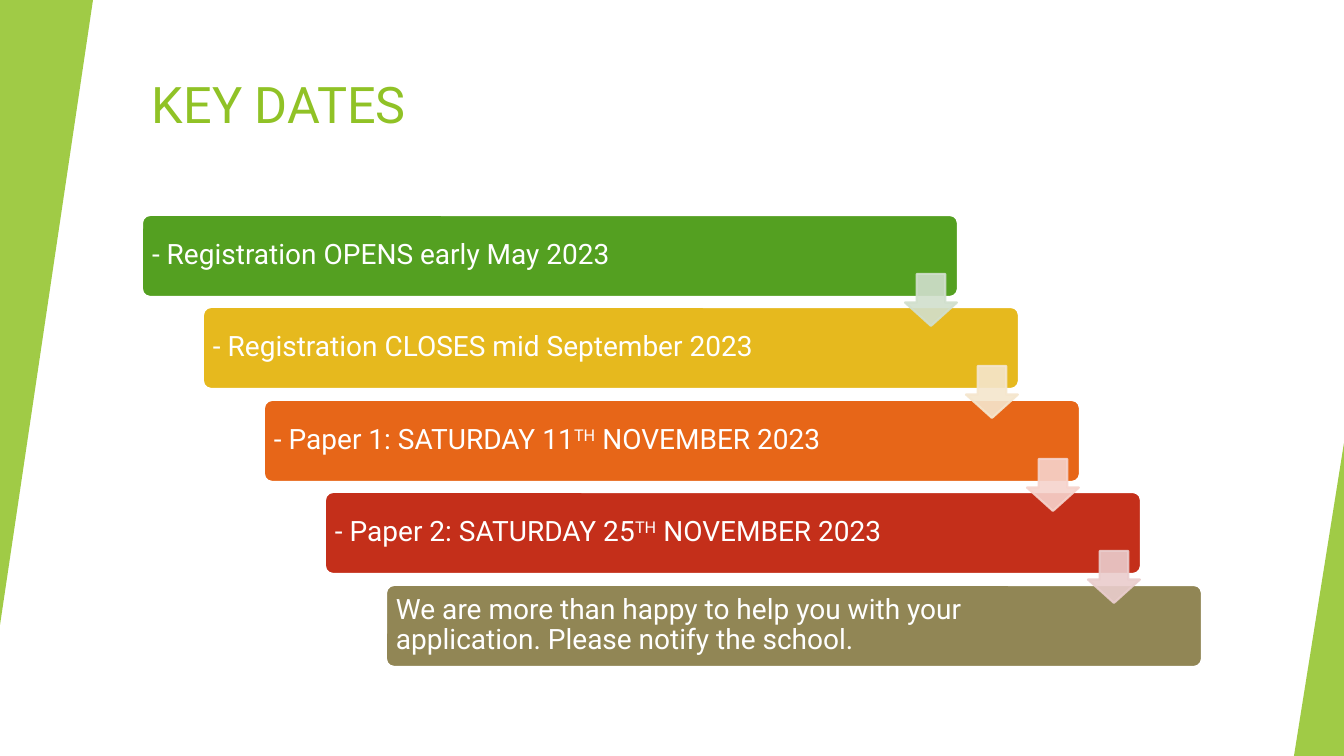
"""Build the key dates slide: a staircase of dated steps joined by arrows."""
import lxml.etree
import pptx
import pptx.dml.color
import pptx.enum.shapes
import pptx.enum.text
import pptx.oxml.ns
import pptx.util

RGB = pptx.dml.color.RGBColor
SHAPE = pptx.enum.shapes.MSO_SHAPE
ANCHOR = pptx.enum.text.MSO_ANCHOR

SLIDE_W, SLIDE_H = 1344, 756
SCALE = 12192000 / SLIDE_W
FONT = "Roboto"

WHITE = RGB(0xFF, 0xFF, 0xFF)
LIME = RGB(0x90, 0xC2, 0x26)
GREEN = RGB(0x54, 0xA0, 0x21)
YELLOW = RGB(0xE6, 0xB9, 0x1E)
ORANGE = RGB(0xE7, 0x66, 0x18)
RED = RGB(0xC4, 0x2F, 0x1A)
OLIVE = RGB(0x91, 0x86, 0x55)
PALE_GREEN = RGB(0xD1, 0xDF, 0xCD)
PALE_YELLOW = RGB(0xF5, 0xE6, 0xCD)
PALE_ORANGE = RGB(0xF6, 0xD3, 0xCC)
PALE_RED = RGB(0xEA, 0xCD, 0xCD)

STEPS = [
    (["- Registration OPENS early May 2023"], GREEN, 720),
    (["- Registration CLOSES mid September 2023"], YELLOW, 698),
    (["- Paper 1: SATURDAY 11", "TH", " NOVEMBER 2023"], ORANGE, 698),
    (["- Paper 2: SATURDAY 25", "TH", " NOVEMBER 2023"], RED, 698),
    (["We are more than happy to help you with your application. "
      "Please notify the school."], OLIVE, 698),
]
ARROWS = [PALE_GREEN, PALE_YELLOW, PALE_ORANGE, PALE_RED]


def px(n):
    """Turn a length in px into EMU."""
    return pptx.util.Emu(round(n * SCALE))


def stair(left, top, i):
    """Return the corner of item i on the staircase."""
    return left + 61 * i, top + 185 * i // 2


def add_shape(s, kind, box, color, adjust, line=None, opacity=100):
    """Add a filled preset shape, outlined if a line colour is given."""
    sp = s.shapes.add_shape(kind, *map(px, box))
    sp.shadow.inherit = False
    for i, value in enumerate(adjust):
        sp.adjustments[i] = value
    sp.fill.solid()
    sp.fill.fore_color.rgb = color
    if line is None:
        sp.line.fill.background()
    else:
        sp.line.color.rgb = line
        sp.line.width = pptx.util.Pt(1.5)
    if opacity < 100:
        for clr in sp._element.spPr.iter(pptx.oxml.ns.qn("a:srgbClr")):
            alpha = lxml.etree.SubElement(clr, pptx.oxml.ns.qn("a:alpha"))
            alpha.set("val", str(opacity * 1000))
    return sp


def add_text(s, box, parts, size, color, anchor, margins, spacing):
    """Add a text box whose every second part is superscript."""
    tf = s.shapes.add_textbox(*map(px, box)).text_frame
    tf.word_wrap = True
    tf.vertical_anchor = anchor
    tf.margin_left, tf.margin_top = map(px, margins)
    tf.margin_right, tf.margin_bottom = map(px, margins)
    p = tf.paragraphs[0]
    p.line_spacing = spacing
    for i, part in enumerate(parts):
        r = p.add_run()
        r.text = part
        r.font.name = FONT
        r.font.size = pptx.util.Pt(size)
        r.font.color.rgb = color
        if i % 2:
            r._r.get_or_add_rPr().set("baseline", "30000")


def add_step(s, i, parts, color, text_width):
    """Add one bar of the staircase with its text."""
    left, top = stair(142, 215, i)
    add_shape(s, SHAPE.ROUNDED_RECTANGLE, (left, top, 816, 82), color, [0.1], WHITE)
    add_text(s, (left + 2, top + 2, text_width, 77), parts, 20, WHITE,
             ANCHOR.MIDDLE, (8, 8), 0.9)


def add_arrow(s, i, color):
    """Add the arrow that leads from step i to the next."""
    add_shape(s, SHAPE.DOWN_ARROW, (*stair(905, 274, i), 52, 52), color,
              [0.55, 0.45], color, 90)


def main():
    """Build and save the slide."""
    prs = pptx.Presentation()
    prs.slide_width, prs.slide_height = px(SLIDE_W), px(SLIDE_H)
    s = prs.slides.add_slide(prs.slide_layouts[6])
    add_text(s, (142, 68, 1124, 121), ["KEY DATES"], 36, LIME,
             ANCHOR.TOP, (10, 5), 1.0)
    corner = add_shape(s, SHAPE.ISOSCELES_TRIANGLE, (0, 0, 93, 625), LIME, [1], opacity=85)
    corner.rotation = 180
    add_shape(s, SHAPE.ISOSCELES_TRIANGLE, (1294, 443, 50, 313), LIME, [1], opacity=85)
    for i, (parts, color, text_width) in enumerate(STEPS):
        add_step(s, i, parts, color, text_width)
    for i, color in enumerate(ARROWS):
        add_arrow(s, i, color)
    prs.save("out.pptx")


if __name__ == "__main__":
    main()
